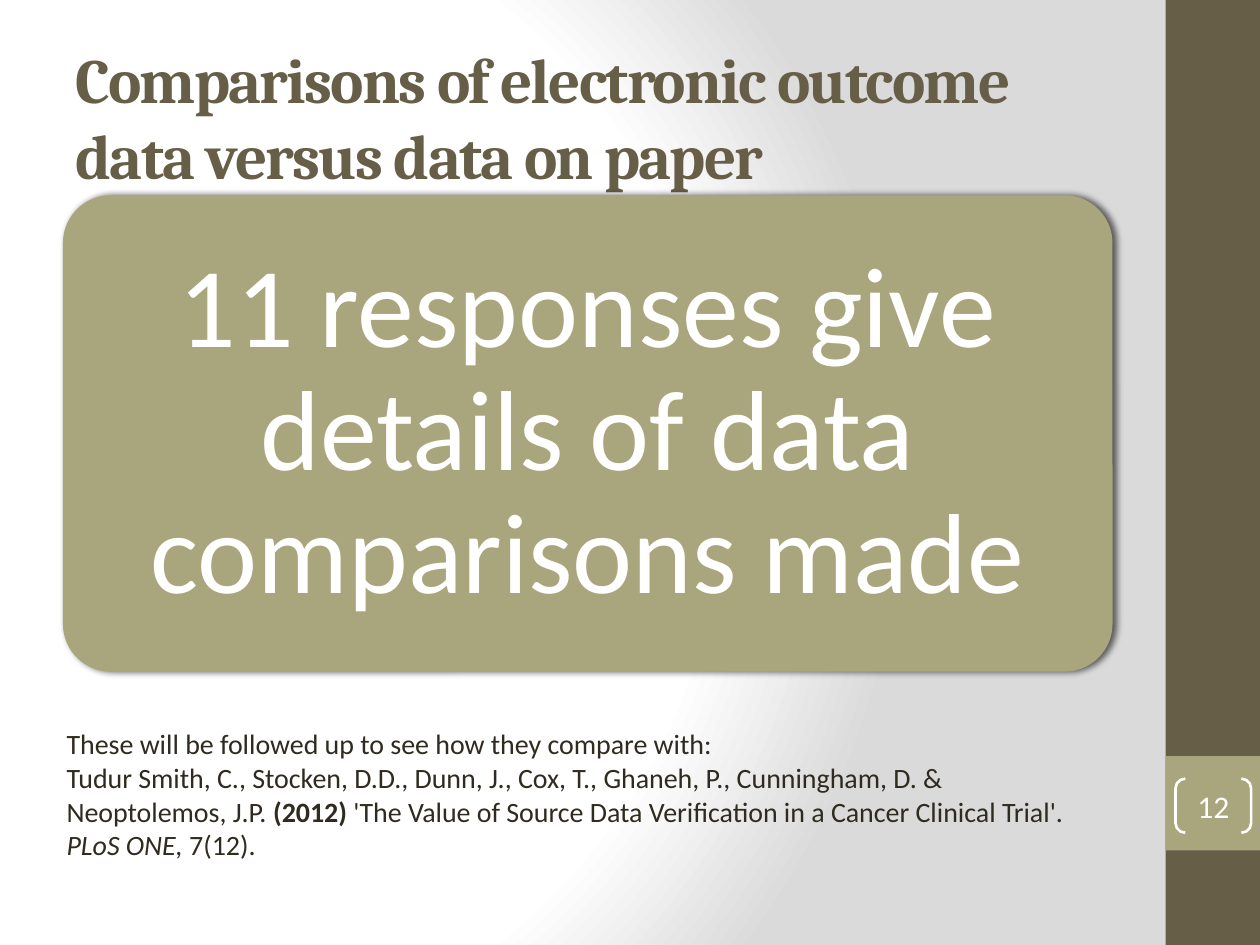
from lxml import etree
from pptx import Presentation
from pptx.dml.color import RGBColor
from pptx.enum import shapes, text
from pptx.oxml import parse_xml
from pptx.oxml.ns import nsdecls, qn
from pptx.util import Inches, Pt

HUES = {"brown": "675E47", "olive": "A9A57C", "ink": "2F2B20",
        "white": "FFFFFF", "gray": "DADADA", "black": "000000"}
KIND = shapes.MSO_SHAPE
MID = text.MSO_ANCHOR.MIDDLE
LEFT, CENTER = text.PP_ALIGN.LEFT, text.PP_ALIGN.CENTER


def hue(name):
    return RGBColor.from_string(HUES[name])


class Deck:
    """Holds the style and the current slide."""

    body, head = "Calibri", "Cambria"

    def __init__(self, wide, high):
        self.prs = Presentation()
        self.prs.slide_width, self.prs.slide_height = Inches(wide), Inches(high)
        self.slide = self.prs.slides.add_slide(self.prs.slide_layouts[5])

    def back(self, stops, rect):
        """Fill the background with a circular gradient."""
        self.slide.background.fill.solid()
        fill = self.slide.element.find(".//" + qn("p:bgPr")).find(qn("a:solidFill"))
        marks = "".join(f'<a:gs pos="{pos * 1000}"><a:srgbClr val="{HUES[name]}"/></a:gs>'
                        for pos, name in stops)
        sides = " ".join(f'{side}="{part * 1000}"' for side, part in zip("ltrb", rect))
        fill.getparent().replace(fill, parse_xml(
            f'<a:gradFill {nsdecls("a")} rotWithShape="1"><a:gsLst>{marks}</a:gsLst>'
            f'<a:path path="circle"><a:fillToRect {sides}/></a:path></a:gradFill>'))

    def place(self, item, box):
        item.left, item.top, item.width, item.height = map(Inches, box)

    def frame(self, item, pad=None, anchor=MID):
        """Set wrapping, anchor and margins, and return the text frame."""
        tf = item.text_frame
        tf.word_wrap, tf.vertical_anchor = True, anchor
        tf.auto_size = text.MSO_AUTO_SIZE.NONE
        if pad is not None:
            tf.margin_left = tf.margin_right = Inches(pad)
            tf.margin_top = tf.margin_bottom = Inches(pad)
        return tf

    def add_run(self, para, words, size, color, font=None, align=LEFT, bold=False, italic=False):
        para.alignment = align
        run = para.add_run()
        run.text = words
        run.font.name, run.font.size = font or self.body, Pt(size)
        run.font.bold, run.font.italic = bold, italic
        run.font.color.rgb = hue(color)
        return run

    def title(self, box, words):
        item = self.slide.shapes.title
        self.place(item, box)
        run = self.add_run(self.frame(item).paragraphs[0], words, 36, "brown",
                           self.head, bold=True)
        run.font._element.set("spc", "-100")

    def shape(self, kind, box, fill=None, line=None, adj=None, home=None):
        item = (home or self.slide).shapes.add_shape(kind, *map(Inches, box))
        item.shadow.inherit = False
        if adj is not None:
            item.adjustments[0] = adj
        if fill:
            item.fill.solid()
            item.fill.fore_color.rgb = hue(fill)
        else:
            item.fill.background()
        if line:
            item.line.color.rgb, item.line.width = hue(line), Pt(1.5)
        else:
            item.line.fill.background()
        return item

    def shade(self, item, blur, dist, alpha):
        """Cast a shadow to the right."""
        glow = item.element.spPr.find(qn("a:effectLst"))
        cast = etree.SubElement(glow, qn("a:outerShdw"), blurRad=str(Pt(blur)),
                                dist=str(Pt(dist)), dir="0", rotWithShape="0")
        tint = etree.SubElement(cast, qn("a:srgbClr"), val=HUES["black"])
        etree.SubElement(tint, qn("a:alpha"), val=str(alpha * 1000))

    def card(self, box, words):
        """Draw a rounded panel with its large text, as one group."""
        group = self.slide.shapes.add_group_shape()
        panel = self.shape(KIND.ROUNDED_RECTANGLE, box, "olive", adj=0.1, home=group)
        self.shade(panel, 4, 2, 60)
        gap = 0.11
        left, top, wide, high = box
        inner = (left + gap, top + gap, wide - 2 * gap, high - 2 * gap)
        item = group.shapes.add_textbox(*map(Inches, inner))
        para = self.frame(item, 0.27).paragraphs[0]
        para.line_spacing = 0.9
        self.add_run(para, words, 65, "white", align=CENTER)

    def badge(self, box, words):
        item = self.shape(KIND.DOUBLE_BRACKET, box, line="white", adj=0.18)
        self.add_run(self.frame(item, 0).paragraphs[0], words, 18, "white", align=CENTER)

    def note(self, box, lines):
        item = self.slide.shapes.add_textbox(*map(Inches, box))
        tf = self.frame(item, anchor=text.MSO_ANCHOR.TOP)
        tf.auto_size = text.MSO_AUTO_SIZE.SHAPE_TO_FIT_TEXT
        for i, runs in enumerate(lines):
            para = tf.add_paragraph() if i else tf.paragraphs[0]
            for words, look in runs:
                self.add_run(para, words, 16, "ink", **look)


def main():
    deck = Deck(10, 7.5)
    deck.back([(0, "white"), (75, "white"), (100, "gray")], (20, 50, 100, 50))
    deck.shape(KIND.RECTANGLE, (9.25, 0, 0.75, 7.5), "brown")
    deck.shape(KIND.RECTANGLE, (9.25, 6, 0.75, 0.75), "olive")
    deck.title((0.5, 0.3, 8.33, 1.25),
               "Comparisons of electronic outcome data versus data on paper")
    deck.card((0.5, 1.55, 8.33, 3.78), "11 responses give details of data comparisons made")
    deck.badge((9.33, 6.18, 0.6, 0.43), "12")
    deck.note((0.43, 5.72, 8.35, 1.18), [
        [("These will be followed up to see how they compare with:", {})],
        [("Tudur Smith, C., Stocken, D.D., Dunn, J., Cox, T., Ghaneh, P., "
          "Cunningham, D. & Neoptolemos, J.P. ", {}),
         ("(2012) ", {"bold": True}),
         ("'The Value of Source Data Verification in a Cancer Clinical Trial'. ", {}),
         ("PLoS ONE, ", {"italic": True}),
         ("7(12).", {})],
    ])
    deck.prs.save("out.pptx")


if __name__ == "__main__":
    main()
